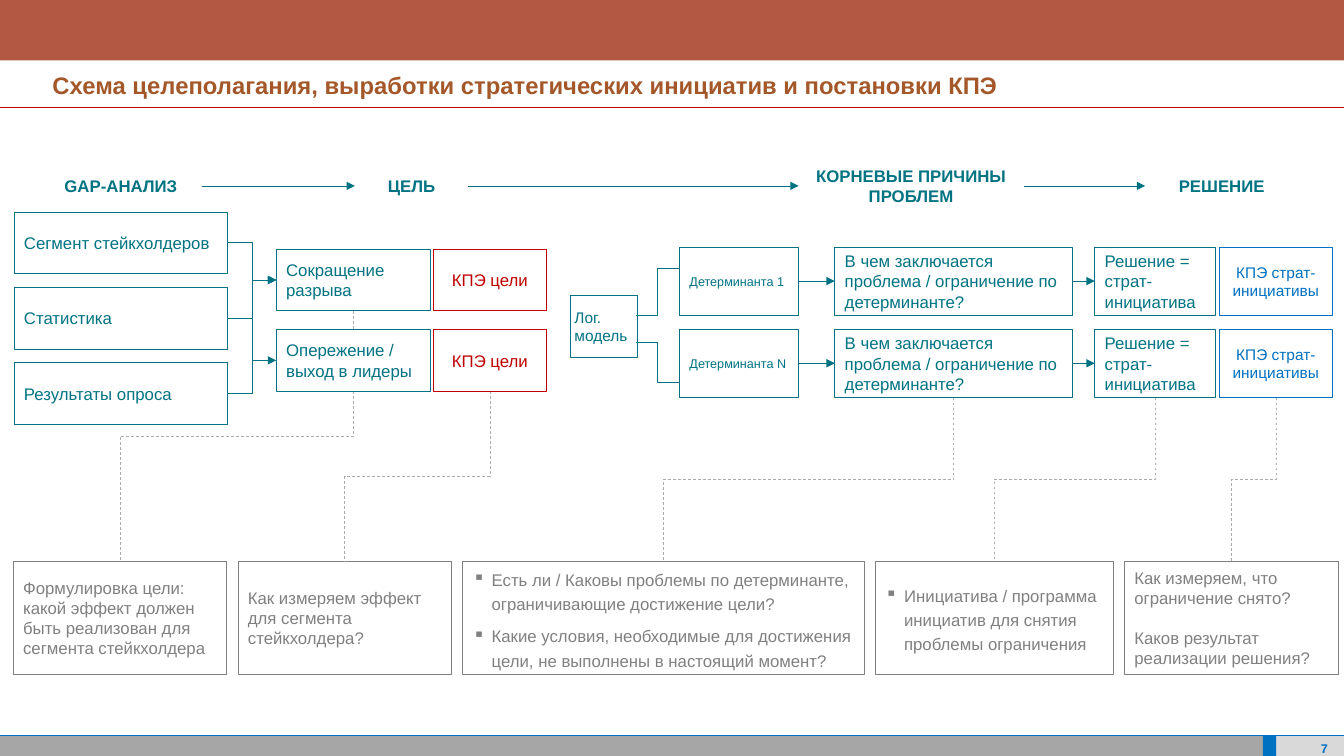
from lxml.etree import SubElement
from pptx import Presentation
from pptx.dml.color import RGBColor
from pptx.enum.dml import MSO_LINE
from pptx.enum.shapes import MSO_CONNECTOR, MSO_SHAPE
from pptx.enum.text import MSO_ANCHOR, PP_ALIGN
from pptx.oxml.ns import qn
from pptx.util import Pt

TEAL, RED, BLUE = "007382", "C00000", "0070C0"
GREY, PALE_GREY, WHITE = "808080", "AFABAB", "FFFFFF"
TOP, LEFT, BOTTOM, RIGHT = range(4)


def add_box(left, top, width, height, text="", color=TEAL, line=None, fill=WHITE,
            size=12, bold=False, align=PP_ALIGN.LEFT):
    """Add a rectangle; each line of text becomes a paragraph."""
    box = page.shapes.add_shape(MSO_SHAPE.RECTANGLE, Pt(left), Pt(top), Pt(width), Pt(height))
    box.shadow.inherit = False
    box.fill.solid()
    box.fill.fore_color.rgb = RGBColor.from_string(fill)
    if line:
        box.line.color.rgb = RGBColor.from_string(line)
        box.line.width = Pt(0.5)
    else:
        box.line.fill.background()
    frame = box.text_frame
    frame.word_wrap = True
    frame.vertical_anchor = MSO_ANCHOR.MIDDLE
    frame.text = text
    for para in frame.paragraphs:
        para.alignment = align
        for span in para.runs:
            span.font.name = "Arial"
            span.font.size = Pt(size)
            span.font.bold = bold
            span.font.color.rgb = RGBColor.from_string(color)
    return box


def add_line(x1, y1, x2, y2, color=TEAL, kind=MSO_CONNECTOR.STRAIGHT, arrow=False, joined=None):
    """Add a thin connector; joined holds the two shapes it links, right side to left side."""
    connector = page.shapes.add_connector(kind, Pt(x1), Pt(y1), Pt(x2), Pt(y2))
    if joined:
        connector.begin_connect(joined[0], RIGHT)
        connector.end_connect(joined[1], LEFT)
    connector.line.color.rgb = RGBColor.from_string(color)
    connector.line.width = Pt(0.5)
    if arrow:
        SubElement(connector.line._get_or_add_ln(), qn("a:tailEnd"), type="triangle")
    SubElement(connector._element.spPr, qn("a:effectLst"))
    return connector


deck = Presentation()
deck.slide_width, deck.slide_height = Pt(960), Pt(540)
page = deck.slides.add_slide(deck.slide_layouts[6])

# Page frame and title
add_box(0, 525, 902, 15, fill="A6A6A6")
add_box(911.5, 525, 48.5, 15, fill="D9D9D9")
add_box(902, 525, 9.5, 15, fill=BLUE)
add_line(0, 525, 960, 525, BLUE)
add_box(0, 0, 960, 43.2, fill="B25843")
add_line(0, 77, 960, 77, RED)

number = page.shapes.add_textbox(Pt(918.7), Pt(527), Pt(41.3), Pt(11.5))
title = page.shapes.add_textbox(Pt(20.2), Pt(43.2), Pt(939.8), Pt(33.8))
for box, text, size, color, align, insets in (
        (number, "7", 9, BLUE, PP_ALIGN.RIGHT, (8.6, 0, 11.5, 0)),
        (title, "Схема целеполагания, выработки стратегических инициатив и постановки КПЭ",
         17, "A45829", PP_ALIGN.JUSTIFY, (17.3, 2.9, 11.5, 5.8))):
    frame = box.text_frame
    frame.word_wrap = True
    frame.margin_left, frame.margin_top, frame.margin_right, frame.margin_bottom = map(Pt, insets)
    para = frame.paragraphs[0]
    para.text = text
    para.alignment = align
    para.line_spacing = 1.2
    para.font.name = "Arial"
    para.font.size = Pt(size)
    para.font.bold = True
    para.font.color.rgb = RGBColor.from_string(color)

# Notes at the bottom: text, width, bulleted, and the point the dashed line comes from
notes = [
    ("Формулировка цели: какой эффект должен быть реализован для сегмента стейкхолдера",
     152.6, False, 252.5, 222),
    ("Как измеряем эффект для сегмента стейкхолдера?", 152.6, False, 350, 279.4),
    ("Есть ли / Каковы проблемы по детерминанте, ограничивающие достижение цели?\n"
     "Какие условия, необходимые для достижения цели, не выполнены в настоящий момент?",
     286.6, True, 681.3, 284),
    ("Инициатива / программа инициатив для снятия проблемы ограничения", 170, True, 825.2, 284),
    ("Как измеряем, что ограничение снято?\nКаков результат реализации решения?",
     152.6, False, 911.4, 284),
]
note_left, note_top, note_gap = 9.4, 401, 8
for text, width, bulleted, source_x, source_y in notes:
    note = add_box(note_left, note_top, width, 80.7, text, GREY, GREY)
    for index, para in enumerate(note.text_frame.paragraphs):
        if bulleted:
            properties = para._p.get_or_add_pPr()
            properties.set("marL", str(Pt(13.5)))
            properties.set("indent", str(Pt(-13.5)))
            SubElement(properties, qn("a:buChar"), char="▪")
            para.line_spacing = 1.2
            para.space_after = Pt(6)
        elif index:
            para.space_before = Pt(14)
    # A quarter turn makes the elbow leave downwards
    target_x = note_left + width / 2
    middle_x, middle_y = (source_x + target_x) / 2, (source_y + note_top) / 2
    half_drop, half_shift = (note_top - source_y) / 2, (source_x - target_x) / 2
    drop = add_line(middle_x - half_drop, middle_y - half_shift,
                    middle_x + half_drop, middle_y + half_shift, PALE_GREY, MSO_CONNECTOR.ELBOW)
    drop.line.dash_style = MSO_LINE.DASH
    drop._element.spPr.find(qn("a:xfrm")).set("rot", "5400000")
    note_left += width + note_gap

# Stage headings
headings = [
    add_box(left, 132.8 - height / 2, width, height, text, bold=True, align=PP_ALIGN.CENTER)
    for text, left, width, height in (
        ("GAP-АНАЛИЗ", 28.8, 115.2, 35.2), ("ЦЕЛЬ", 253.5, 81, 36.8),
        ("КОРНЕВЫЕ ПРИЧИНЫ ПРОБЛЕМ", 570.5, 160.6, 44), ("РЕШЕНИЕ", 818, 109.4, 44))]
for pair in zip(headings, headings[1:]):
    add_line(0, 0, 0, 0, arrow=True, joined=pair)

# Gap analysis and goals
inputs = [add_box(10, 151.4 + 53.9 * row, 152.6, 44, text, line=TEAL)
          for row, text in enumerate(("Сегмент стейкхолдеров", "Статистика", "Результаты опроса"))]
goals = []
for row, text in enumerate(("Сокращение разрыва", "Опережение / выход в лидеры")):
    goal_top = 178 + 57.4 * row
    goals.append(add_box(197.3, goal_top, 110.4, 44, text, line=TEAL))
    add_box(309.6, goal_top, 80.8, 44, "КПЭ цели", RED, RED, align=PP_ALIGN.CENTER)
for source, goal in [(source, goals[0]) for source in inputs] + [(inputs[0], goals[1])]:
    add_line(0, 0, 0, 0, kind=MSO_CONNECTOR.ELBOW, arrow=True, joined=(source, goal))

# Root causes and solutions
model = add_box(407.5, 211, 48, 44, "Лог. модель", line=TEAL, size=11)
model.text_frame.margin_left = model.text_frame.margin_right = Pt(2.8)
for row, (name, branch_y, model_y) in enumerate((("1", 191.5, 225.4), ("N", 273.3, 244.3))):
    top, height = 176.5 + 58.7 * row, 48.6
    determinant = add_box(485.4, top, 85, height, f"Детерминанта {name}", line=TEAL, size=9)
    problem = add_box(596.3, top, 170, height,
                      "В чем заключается проблема / ограничение по детерминанте?", line=TEAL)
    solution = add_box(782, top, 86.4, height, "Решение = страт-инициатива", line=TEAL)
    add_box(871, top, 80.8, height, "КПЭ страт-инициативы", BLUE, BLUE, size=11,
            align=PP_ALIGN.CENTER)
    add_line(485.4, branch_y, 454.2, model_y, kind=MSO_CONNECTOR.ELBOW)
    for pair in ((determinant, problem), (problem, solution)):
        add_line(0, 0, 0, 0, arrow=True, joined=pair)

deck.save("out.pptx")
